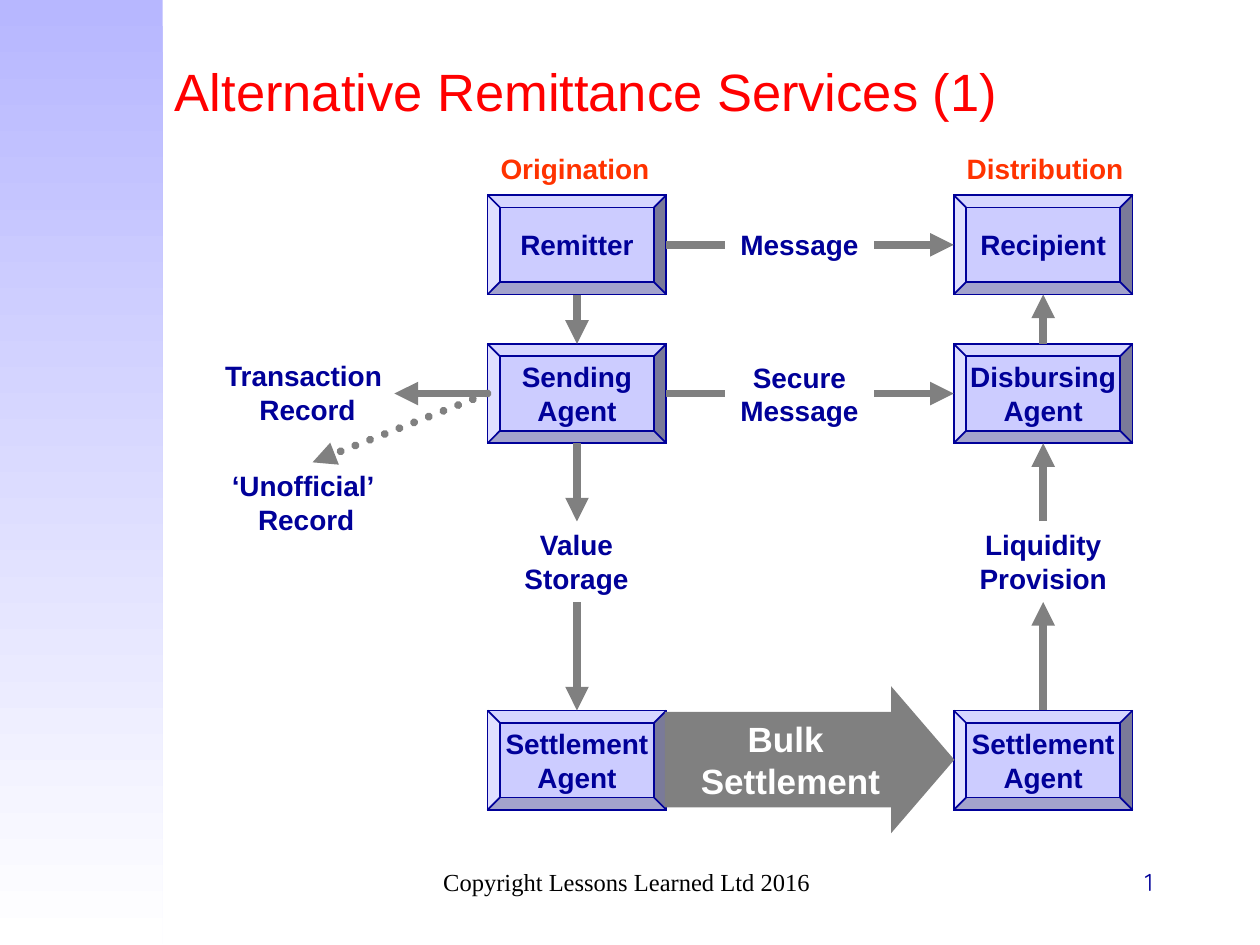
from lxml import etree
from pptx import Presentation
from pptx.dml.color import RGBColor
from pptx.enum.dml import MSO_LINE as Dash
from pptx.enum.shapes import MSO_CONNECTOR as Conn, MSO_SHAPE as Kind
from pptx.enum.text import MSO_ANCHOR as Anchor, PP_ALIGN as Align
from pptx.oxml.ns import qn
from pptx.util import Pt

NAVY = RGBColor(0x00, 0x00, 0x99)
LILAC = RGBColor(0xCC, 0xCC, 0xFF)
HAZE = RGBColor(0xB7, 0xB7, 0xFF)
GREY = RGBColor(0x80, 0x80, 0x80)
ORANGE = RGBColor(0xFF, 0x33, 0x00)
RED = RGBColor(0xFF, 0x00, 0x00)
BLACK = RGBColor(0x00, 0x00, 0x00)
WHITE = RGBColor(0xFF, 0xFF, 0xFF)

# Font formats
BOLD = {"name": "Arial", "size": Pt(16), "bold": True}
BULK = {**BOLD, "size": Pt(20)}
TITLE = {"name": "Arial", "size": Pt(30)}
FOOT = {"name": "Times New Roman", "size": Pt(14)}
PAGE = {"name": "Quicksand", "size": Pt(14)}

# Box grid, in points
LEFT, RIGHT = 278.6, 545
ROWS = TOP, MID, LOW = 111.5, 196.5, 406
WIDE, HIGH = 102.2, 56.8
STORE, STORE_END = 298, 344


def write(shape, text, font, color, align=Align.CENTER, anchor=Anchor.TOP, wrap=False):
    frame = shape.text_frame
    for key, val in {"word_wrap": wrap, "vertical_anchor": anchor}.items():
        setattr(frame, key, val)
    para = frame.paragraphs[0]
    para.text = text
    para.alignment = align
    for run in para.runs:
        for key, val in font.items():
            setattr(run.font, key, val)
        run.font.color.rgb = color


def add_text(slide, area, text, font, color, **opts):
    box = slide.shapes.add_textbox(*map(Pt, area))
    write(box, text, font, color, **opts)
    return box


def add_label(slide, area, text):
    box = add_text(slide, area, text, BOLD, NAVY, wrap=True)
    box.fill.solid()
    box.fill.fore_color.rgb = WHITE


def add_block(slide, kind, area, fill, line, width, adjust=()):
    shape = slide.shapes.add_shape(kind, *map(Pt, area))
    shape.shadow.inherit = False
    shape.fill.solid()
    shape.fill.fore_color.rgb = fill
    shape.line.color.rgb = line
    shape.line.width = Pt(width)
    etree.SubElement(shape.element.spPr.find(qn("a:ln")), qn("a:miter"), lim="800000")
    for i, val in enumerate(adjust):
        shape.adjustments[i] = val
    return shape


def add_arrow(slide, start, end, dotted=False):
    link = slide.shapes.add_connector(Conn.STRAIGHT, *map(Pt, start + end))
    link.line.color.rgb = GREY
    link.line.width = Pt(4.5)
    props = link.element.spPr
    line = props.find(qn("a:ln"))
    if dotted:
        link.line.dash_style = Dash.ROUND_DOT
        line.set("cap", "rnd")
    etree.SubElement(line, qn("a:tailEnd"), type="triangle")
    etree.SubElement(props, qn("a:effectLst"))


def add_side(slide):
    bar = slide.shapes.add_shape(Kind.RECTANGLE, *map(Pt, (-2.9, 0, 95.8, 539.3)))
    bar.shadow.inherit = False
    bar.line.fill.background()
    bar.fill.gradient()
    bar.fill.gradient_angle = 270
    for stop, color, pos in zip(bar.fill.gradient_stops, (HAZE, WHITE), (0, 1)):
        stop.color.rgb = color
        stop.position = pos


def main():
    deck = Presentation()
    deck.slide_width, deck.slide_height = Pt(720), Pt(540)
    slide = deck.slides.add_slide(deck.slide_layouts[6])

    # Side bar, title and footer
    add_side(slide)
    add_text(slide, (92.9, 20.2, 601.2, 62.6), "Alternative Remittance Services (1)",
             TITLE, RED, align=Align.LEFT, anchor=Anchor.MIDDLE, wrap=True)
    add_text(slide, (246.2, 491.8, 228.2, 36), "Copyright Lessons Learned Ltd 2016",
             FOOT, BLACK, align=Align.LEFT, wrap=True)
    add_text(slide, (516.2, 491.8, 149.8, 36), "1", PAGE, NAVY,
             align=Align.RIGHT, wrap=True)

    # Columns of agents
    columns = [
        (LEFT, 100, "Origination", ("Remitter", "Sending\nAgent", "Settlement\nAgent")),
        (RIGHT, 104.4, "Distribution",
         ("Recipient", "Disbursing\nAgent", "Settlement\nAgent")),
    ]
    for x, width, head, names in columns:
        add_text(slide, (x, 82.8, width, 26.6), head, BOLD, ORANGE)
        for y, name in zip(ROWS, names):
            box = add_block(slide, Kind.BEVEL, (x, y, WIDE, HIGH), LILAC, NAVY, 1, [0.125])
            write(box, name, BOLD, NAVY, anchor=Anchor.MIDDLE)

    # Arrows across and along the columns
    for y in ROWS:
        add_arrow(slide, (LEFT + WIDE, y + HIGH / 2), (RIGHT, y + HIGH / 2))
    down, up = LEFT + WIDE / 2, RIGHT + WIDE / 2
    for upper, lower in ((TOP + HIGH, MID), (MID + HIGH, STORE), (STORE_END, LOW)):
        add_arrow(slide, (down, upper), (down, lower))
        add_arrow(slide, (up, lower), (up, upper))

    # Labels over the arrows
    for area, text in [
        ((414.3, 126.7, 85, 26.6), "Message"),
        ((414.3, 202.3, 85, 46), "Secure\nMessage"),
        ((292.3, STORE, 74.2, 46), "Value\nStorage"),
        ((550.8, STORE, 90.7, 46), "Liquidity\nProvision"),
    ]:
        add_label(slide, area, text)

    # Bulk settlement
    bulk = add_block(slide, Kind.RIGHT_ARROW, (383, 400.3, 158.4, 67.7),
                     GREY, GREY, 6, [0.717, 0.43])
    write(bulk, "Bulk \nSettlement", BULK, WHITE, anchor=Anchor.MIDDLE)

    # Records kept by the sending agent
    add_text(slide, (121, 201.6, 109.4, 46), "Transaction \nRecord", BOLD, NAVY)
    add_text(slide, (124.6, 264.2, 100.8, 46), "‘Unofficial’ \nRecord", BOLD, NAVY)
    begin = (LEFT, MID + HIGH / 2)
    add_arrow(slide, begin, (225.4, MID + HIGH / 2))
    add_arrow(slide, begin, (178.6, 264.2), dotted=True)

    deck.save("out.pptx")


if __name__ == "__main__":
    main()
